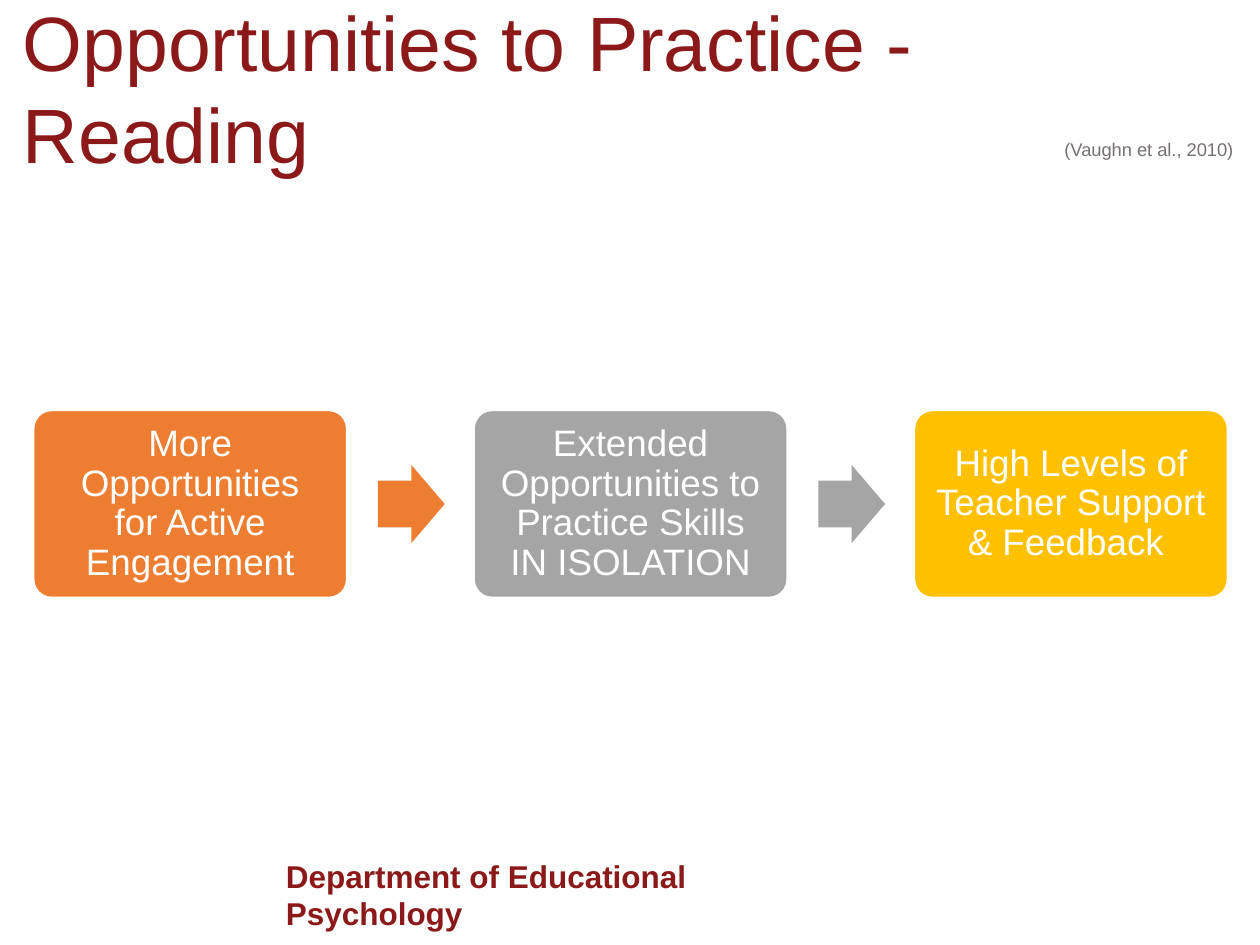
from pptx import Presentation
from pptx.dml.color import RGBColor
from pptx.enum import shapes, text
from pptx.util import Inches, Pt

COLORS = {"maroon": "8C1919", "orange": "ED7D31", "gray": "A5A5A5",
          "gold": "FFC000", "white": "FFFFFF", "citation": "767171"}

TITLE = "Opportunities to Practice - Reading"
CITATION = "(Vaughn et al., 2010)"
DEPARTMENT = "Department of Educational Psychology"
STEPS = [
    ("More Opportunities for Active Engagement", "orange"),
    ("Extended Opportunities to Practice Skills IN ISOLATION", "gray"),
    ("High Levels of Teacher Support & Feedback ", "gold"),
]

STEP_LEFT, STEP_PITCH, STEP_WIDTH, STEP_HEIGHT = 0.26, 3.495, 2.5, 1.5
ARROW_OFFSET, ARROW_WIDTH, ARROW_HEIGHT = 2.74, 0.53, 0.62
MIDDLE = 4.0


def color(name):
    return RGBColor.from_string(COLORS[name])


def write(shape, words, size, color_name, align, bold=False):
    frame = shape.text_frame
    frame.text = words
    paragraph = frame.paragraphs[0]
    paragraph.alignment = align
    font = paragraph.runs[0].font
    font.name, font.size, font.bold = "Arial", Pt(size), bold
    font.color.rgb = color(color_name)
    return frame


def add_block(slide, kind, left, width, height, fill, adjustments):
    """Add a filled shape centred on the middle line of the flow."""
    block = slide.shapes.add_shape(kind, Inches(left), Inches(MIDDLE - height / 2),
                                   Inches(width), Inches(height))
    block.shadow.inherit = False
    for index, value in enumerate(adjustments):
        block.adjustments[index] = value
    block.fill.solid()
    block.fill.fore_color.rgb = color(fill)
    block.line.fill.background()
    return block


def add_step(slide, left, words, fill):
    step = add_block(slide, shapes.MSO_SHAPE.ROUNDED_RECTANGLE, left,
                     STEP_WIDTH, STEP_HEIGHT, fill, [0.1])
    step.line.color.rgb = color("white")
    step.line.width = Pt(2)
    frame = write(step, words, 21, "white", text.PP_ALIGN.CENTER)
    frame.word_wrap = True
    frame.vertical_anchor = text.MSO_ANCHOR.MIDDLE
    frame.margin_left = frame.margin_right = Inches(0.13)
    frame.margin_top = frame.margin_bottom = Inches(0.13)
    frame.paragraphs[0].line_spacing = 0.9


def main():
    presentation = Presentation()
    presentation.slide_width, presentation.slide_height = Inches(10), Inches(7.5)
    slide = presentation.slides.add_slide(presentation.slide_layouts[5])

    department = slide.shapes.add_textbox(Inches(2.17), Inches(6.75), Inches(4.58), Inches(0.4))
    write(department, DEPARTMENT, 18, "maroon", text.PP_ALIGN.LEFT, bold=True).word_wrap = True

    title = slide.shapes.title
    title.left, title.top = Inches(0.08), Inches(0.21)
    title.width, title.height = Inches(9.67), Inches(0.96)
    frame = write(title, TITLE, 44, "maroon", text.PP_ALIGN.LEFT)
    frame.auto_size = text.MSO_AUTO_SIZE.NONE
    frame.vertical_anchor = text.MSO_ANCHOR.MIDDLE

    for index, (words, fill) in enumerate(STEPS):
        left = STEP_LEFT + index * STEP_PITCH
        add_step(slide, left, words, fill)
        if index < len(STEPS) - 1:
            add_block(slide, shapes.MSO_SHAPE.RIGHT_ARROW, left + ARROW_OFFSET,
                      ARROW_WIDTH, ARROW_HEIGHT, fill, [0.6, 0.5])

    citation = slide.shapes.add_textbox(Inches(8.25), Inches(1.05), Inches(1.64), Inches(0.29))
    write(citation, CITATION, 10.5, "citation", text.PP_ALIGN.RIGHT).word_wrap = False

    presentation.save("out.pptx")


if __name__ == "__main__":
    main()
